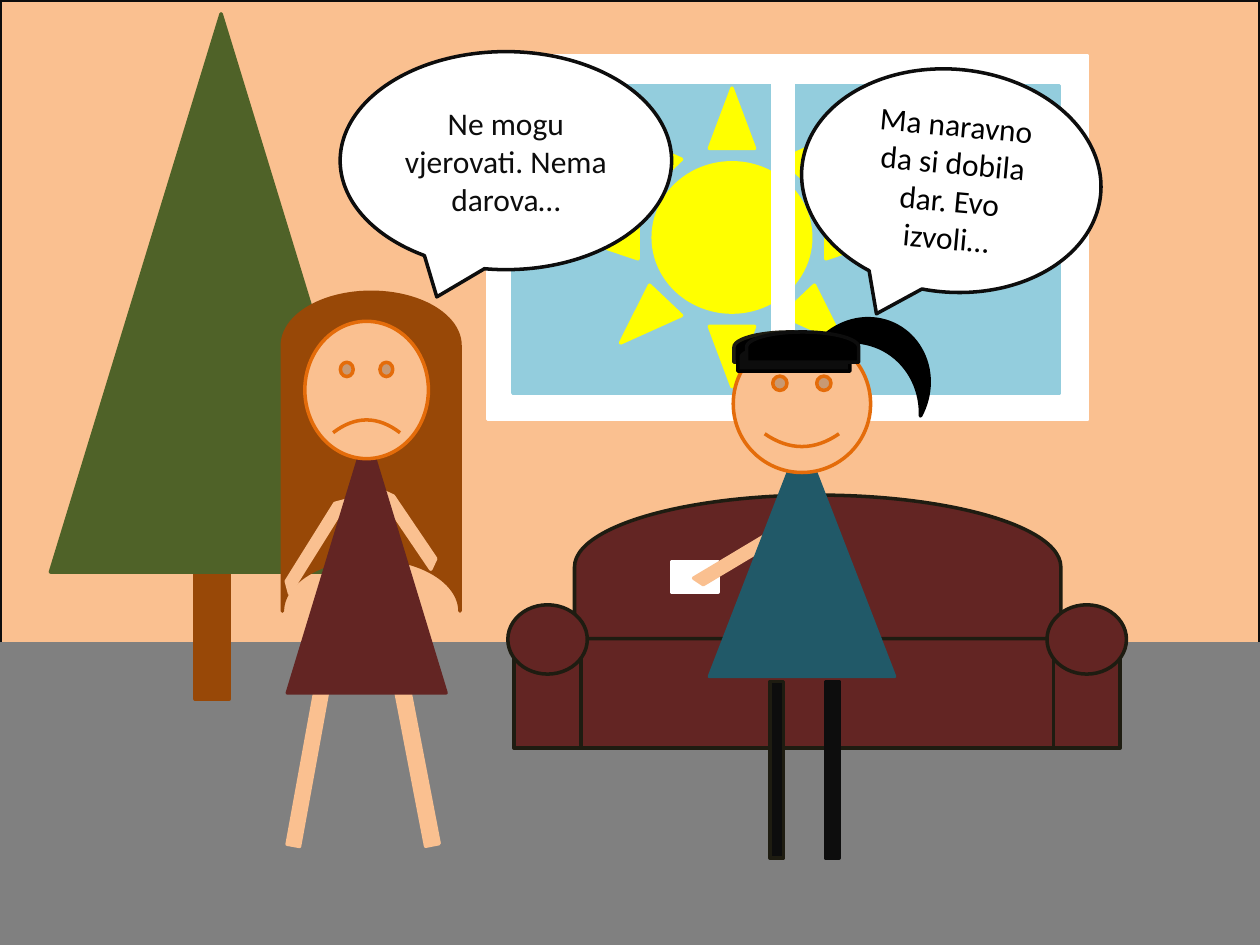
"""Build a cartoon slide: two girls talking by a tree, a window and a sofa."""
import pptx
import pptx.dml.color
import pptx.enum.shapes
import pptx.enum.text
import pptx.util

Pt = pptx.util.Pt
RGBColor = pptx.dml.color.RGBColor
Kind = pptx.enum.shapes.MSO_SHAPE

PEACH = RGBColor(0xFA, 0xC0, 0x90)
GREY = RGBColor(0x80, 0x80, 0x80)
WINE = RGBColor(0x63, 0x25, 0x23)
OLIVE_BLACK = RGBColor(0x1E, 0x1C, 0x11)
BROWN = RGBColor(0x98, 0x48, 0x07)
GREEN = RGBColor(0x4F, 0x62, 0x28)
SKY = RGBColor(0x93, 0xCD, 0xDD)
YELLOW = RGBColor(0xFF, 0xFF, 0x00)
ORANGE = RGBColor(0xE4, 0x6C, 0x0A)
TEAL = RGBColor(0x21, 0x59, 0x68)
WHITE = RGBColor(0xFF, 0xFF, 0xFF)
BLACK = RGBColor(0x00, 0x00, 0x00)
NEAR_BLACK = RGBColor(0x0D, 0x0D, 0x0D)


def draw(shapes, kind, box, fill, line=None, rotation=0, adjustment=None):
    shape = shapes.add_shape(kind, *[Pt(length) for length in box])
    shape.shadow.inherit = False
    shape.fill.solid()
    shape.fill.fore_color.rgb = fill
    shape.line.color.rgb = line or fill
    shape.line.width = Pt(2)
    shape.rotation = rotation
    if adjustment is not None:
        shape.adjustments[0] = adjustment
    return shape


def draw_callout(shapes, box, text, color, rotation=0):
    callout = draw(shapes, Kind.OVAL_CALLOUT, box, WHITE, NEAR_BLACK, rotation)
    frame = callout.text_frame
    frame.word_wrap = True
    frame.vertical_anchor = pptx.enum.text.MSO_ANCHOR.MIDDLE
    paragraph = frame.paragraphs[0]
    paragraph.alignment = pptx.enum.text.PP_ALIGN.CENTER
    run = paragraph.add_run()
    run.text = text
    run.font.name = "Calibri"
    run.font.size = Pt(18)
    run.font.color.rgb = color


presentation = pptx.Presentation()
presentation.slide_width = Pt(720)
presentation.slide_height = Pt(540)
slide = presentation.slides.add_slide(presentation.slide_layouts[6])
room = slide.shapes

draw(room, Kind.RECTANGLE, (0, 0, 720, 368), PEACH, NEAR_BLACK)
draw(room, Kind.RECTANGLE, (0, 368, 720, 172), GREY)

sofa = room.add_group_shape().shapes
draw(sofa, Kind.RECTANGLE, (328.3, 365, 277.9, 62.6), WINE, OLIVE_BLACK)
draw(sofa, Kind.FLOWCHART_DELAY, (426.2, 185, 82.1, 277.9), WINE, OLIVE_BLACK, 270)
for left in (293.8, 601.9):
    draw(sofa, Kind.RECTANGLE, (left, 365, 38.2, 62.6), WINE, OLIVE_BLACK)
for left in (598.3, 290.2):
    draw(sofa, Kind.FLOWCHART_CONNECTOR, (left, 345.6, 45.4, 39.6), WINE, OLIVE_BLACK)

tree = room.add_group_shape().shapes
draw(tree, Kind.RECTANGLE, (111.6, 257, 19.4, 142.6), BROWN)
draw(tree, Kind.FLOWCHART_EXTRACT, (28.8, 7.9, 195.1, 319), GREEN)

draw(room, Kind.FRAME, (278.6, 31.7, 342.7, 208.1), WHITE, adjustment=0.083)
draw(room, Kind.RECTANGLE, (293, 49, 312.5, 175.7), SKY)
draw(room, Kind.SUN, (328.3, 50.4, 180, 170.6), YELLOW)
draw(room, Kind.RECTANGLE, (441.4, 44.6, 12.2, 175.7), WHITE)

sad_girl = room.add_group_shape().shapes
draw(sad_girl, Kind.RECTANGLE, (172.1, 393.8, 7.2, 90), PEACH, rotation=10.3)
draw(sad_girl, Kind.RECTANGLE, (233.3, 379.4, 7.9, 104.4), PEACH, rotation=349.1)
draw(sad_girl, Kind.FLOWCHART_STORED_DATA, (121, 207.4, 182.2, 101.5), BROWN, rotation=90)
draw(sad_girl, Kind.DIAGONAL_STRIPE, (216, 277.9, 28.8, 48.2), PEACH, None, 115, 0.769)
left_arm = draw(sad_girl, Kind.DIAGONAL_STRIPE, (160.6, 289.4, 43.2, 46.1), PEACH, None, 255.1, 0.83)
left_arm._element.spPr.xfrm.set("flipH", "1")
draw(sad_girl, Kind.FLOWCHART_EXTRACT, (164.2, 247, 90.7, 149), WINE)
draw(sad_girl, Kind.SMILEY_FACE, (174.2, 183.6, 70.6, 78.5), PEACH, ORANGE, adjustment=-0.047)

draw_callout(room, (194.4, 29.5, 189.4, 124.6), "Ne mogu vjerovati. Nema darova…", NEAR_BLACK)
draw_callout(room, (457.9, 39.6, 171.4, 127.4), "Ma naravno da si dobila dar. Evo izvoli…", BLACK, 5.2)

happy_girl = room.add_group_shape().shapes
draw(happy_girl, Kind.RECTANGLE, (383.8, 321.1, 26.6, 17.3), WHITE)
draw(happy_girl, Kind.DIAGONAL_STRIPE, (414, 272.2, 35.3, 74.2), PEACH, None, 213.7, 0.813)
draw(happy_girl, Kind.FLOWCHART_EXTRACT, (405.4, 249.8, 105.8, 136.8), TEAL)
draw(happy_girl, Kind.SMILEY_FACE, (419, 191.5, 78.5, 78.5), PEACH, ORANGE)
for left, line in ((439.9, OLIVE_BLACK), (471.6, NEAR_BLACK)):
    draw(happy_girl, Kind.RECTANGLE, (left, 389.5, 7.9, 100.8), NEAR_BLACK, line)
draw(happy_girl, Kind.FLOWCHART_DELAY, (442.8, 166.3, 17.3, 64.1), BLACK, OLIVE_BLACK, 270)
draw(happy_girl, Kind.FLOWCHART_DELAY, (445, 171.4, 17.3, 64.1), NEAR_BLACK, BLACK, 270)
draw(happy_girl, Kind.MOON, (483.8, 167, 38.9, 72.7), BLACK, None, 118.4, 0.4)
draw(happy_girl, Kind.FLOWCHART_DELAY, (450, 166.3, 17.3, 64.1), BLACK, NEAR_BLACK, 270)

presentation.save("out.pptx")
